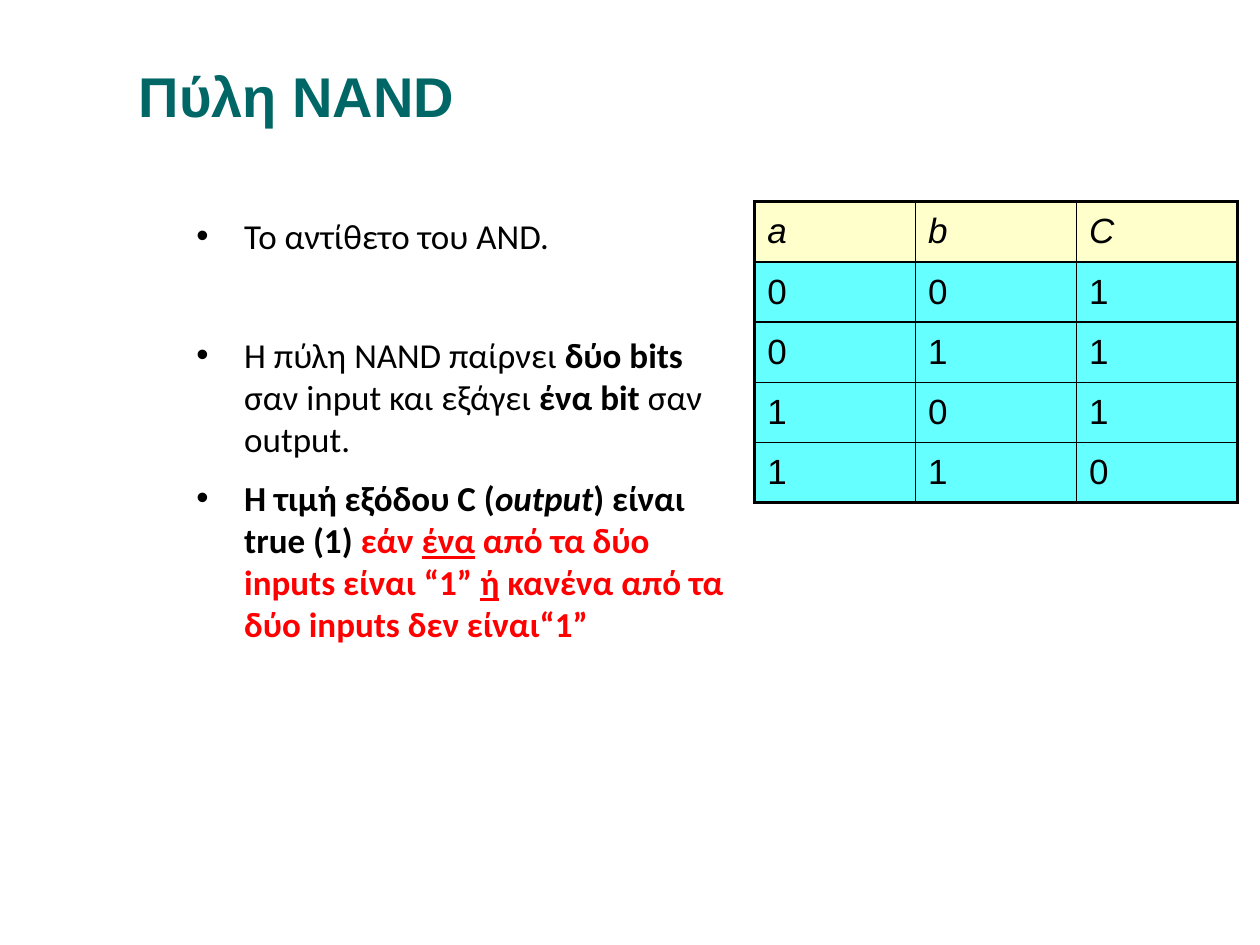
import pptx
import pptx.dml.color
import pptx.enum.text
import pptx.oxml.ns
import pptx.util
from lxml import etree

BLACK, RED, TEAL = "000000", "FF0000", "006666"
CREAM, CYAN = "FFFFCC", "66FFFF"
BODY_FONT, TABLE_FONT = "Calibri", "Arial"

# Each run: text, styles (b, i, u), colour
BULLETS = [
    [("Το αντίθετο του AND.", "", BLACK)],
    [("Η πύλη NAND παίρνει ", "", BLACK), ("δύο bits", "b", BLACK),
     (" σαν input και εξάγει ", "", BLACK), ("ένα bit", "b", BLACK),
     (" σαν output.", "", BLACK)],
    [("Η τιμή εξόδου C (", "b", BLACK), ("output", "bi", BLACK),
     (") είναι true (1) ", "b", BLACK), ("εάν ", "b", RED),
     ("ένα", "bu", RED), (" από τα δύο inputs είναι “1” ", "b", RED),
     ("ή", "bu", RED), (" κανένα από τα δύο inputs δεν είναι“1”", "b", RED)],
]
SPACE_BEFORE = [0, 44, 10]
TRUTH_TABLE = ["abC", "001", "011", "101", "110"]


def rgb(value):
    return pptx.dml.color.RGBColor.from_string(value)


def inches(*values):
    return [pptx.util.Inches(v) for v in values]


def sub(parent, tag, **attrs):
    """Append a DrawingML child element."""
    return etree.SubElement(parent, pptx.oxml.ns.qn(tag), attrs)


def add_run(p, text, size, font, color, styles=""):
    r = p.add_run()
    r.text = text
    r.font.size = pptx.util.Pt(size)
    r.font.name = font
    r.font.color.rgb = rgb(color)
    r.font.bold = "b" in styles
    r.font.italic = "i" in styles
    r.font.underline = "u" in styles


def place_title(s, box):
    title = s.shapes.title
    title.left, title.top, title.width, title.height = inches(*box)
    tf = title.text_frame
    tf.margin_left = pptx.util.Inches(0.6)
    tf.vertical_anchor = pptx.enum.text.MSO_ANCHOR.MIDDLE
    p = tf.paragraphs[0]
    p.alignment = pptx.enum.text.PP_ALIGN.LEFT
    add_run(p, "Πύλη NAND", 32, "Arial", TEAL, "b")


def add_bullets(s, box):
    tf = s.shapes.add_textbox(*inches(*box)).text_frame
    tf.word_wrap = True
    indent = pptx.util.Inches(0.38)
    for i, (runs, space) in enumerate(zip(BULLETS, SPACE_BEFORE)):
        p = tf.add_paragraph() if i else tf.paragraphs[0]
        pPr = p._p.get_or_add_pPr()
        pPr.set("marL", str(indent))
        pPr.set("indent", str(-indent))
        sub(pPr, "a:buFont", typeface="Arial")
        sub(pPr, "a:buChar", char="•")
        if space:
            p.space_before = pptx.util.Pt(space)
        for text, styles, color in runs:
            add_run(p, text, 20, BODY_FONT, color, styles)


def set_borders(cell, outer_edges):
    """Draw thick lines on the table's outer edges, thin ones elsewhere."""
    tcPr = cell._tc.get_or_add_tcPr()
    for edge in "LRTB":
        width = pptx.util.Pt(2.25 if edge in outer_edges else 1)
        ln = sub(tcPr, "a:ln" + edge, w=str(width))
        sub(sub(ln, "a:solidFill"), "a:srgbClr", val=BLACK)


def add_truth_table(s, box):
    n_rows, n_cols = len(TRUTH_TABLE), len(TRUTH_TABLE[0])
    table = s.shapes.add_table(n_rows, n_cols, *inches(*box)).table
    for i, row in enumerate(TRUTH_TABLE):
        for j, value in enumerate(row):
            cell = table.cell(i, j)
            outer = {"T": i == 0, "B": i == n_rows - 1,
                     "L": j == 0, "R": j == n_cols - 1}
            set_borders(cell, [edge for edge in outer if outer[edge]])
            cell.fill.solid()
            cell.fill.fore_color.rgb = rgb(CYAN if i else CREAM)
            cell.vertical_anchor = pptx.enum.text.MSO_ANCHOR.MIDDLE
            add_run(cell.text_frame.paragraphs[0], value, 20, TABLE_FONT,
                    BLACK, "" if i else "i")


def main():
    prs = pptx.Presentation()
    prs.slide_width, prs.slide_height = inches(10, 7.5)
    s = prs.slides.add_slide(prs.slide_layouts[5])
    place_title(s, (0.5, 0.13, 9, 1.25))
    add_bullets(s, (1.46, 1.65, 4.42, 4.95))
    add_truth_table(s, (5.99, 1.6, 3.83, 2.39))
    prs.save("out.pptx")


if __name__ == "__main__":
    main()
